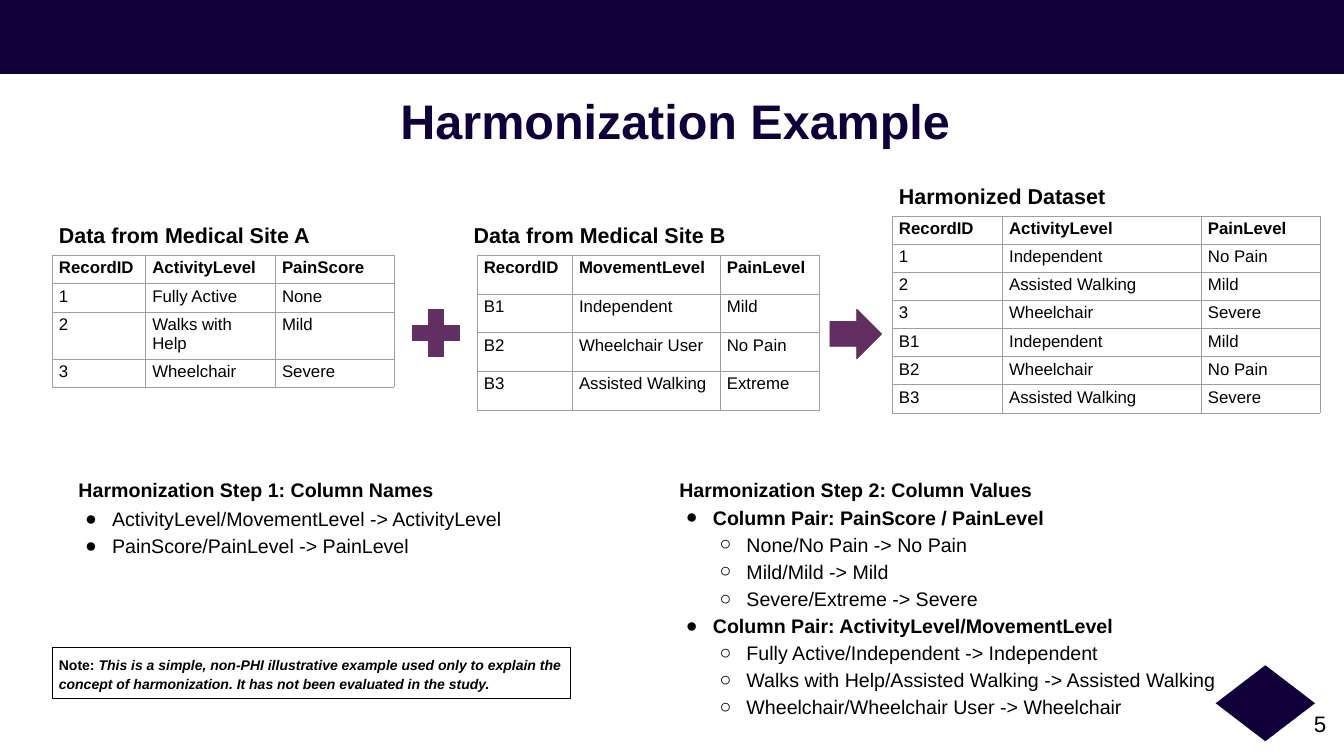
from lxml import etree
from pptx import Presentation
from pptx.dml.color import RGBColor
from pptx.enum.shapes import MSO_SHAPE
from pptx.enum.text import MSO_ANCHOR, PP_ALIGN
from pptx.oxml.ns import qn
from pptx.util import Pt

RECTANGLE, DIAMOND = MSO_SHAPE.RECTANGLE, MSO_SHAPE.DIAMOND
PLUS, ARROW = MSO_SHAPE.MATH_PLUS, MSO_SHAPE.RIGHT_ARROW
TOP, MIDDLE = MSO_ANCHOR.TOP, MSO_ANCHOR.MIDDLE
LEFT, RIGHT = PP_ALIGN.LEFT, PP_ALIGN.RIGHT

NAVY, PURPLE, BLACK, GREY = "0F0039", "632E62", "000000", "9E9E9E"
BULLETS = "●○"

SITE_A = [
    ["RecordID", "ActivityLevel", "PainScore"],
    ["1", "Fully Active", "None"],
    ["2", "Walks with Help", "Mild"],
    ["3", "Wheelchair", "Severe"],
]
SITE_B = [
    ["RecordID", "MovementLevel", "PainLevel"],
    ["B1", "Independent", "Mild"],
    ["B2", "Wheelchair User", "No Pain"],
    ["B3", "Assisted Walking", "Extreme"],
]
HARMONIZED = [
    ["RecordID", "ActivityLevel", "PainLevel"],
    ["1", "Independent", "No Pain"],
    ["2", "Assisted Walking", "Mild"],
    ["3", "Wheelchair", "Severe"],
    ["B1", "Independent", "Mild"],
    ["B2", "Wheelchair", "No Pain"],
    ["B3", "Assisted Walking", "Severe"],
]
COLUMN_NAMES = [
    (0, False, "ActivityLevel/MovementLevel -> ActivityLevel"),
    (0, False, "PainScore/PainLevel -> PainLevel"),
]
COLUMN_VALUES = [
    (0, True, "Column Pair: PainScore / PainLevel"),
    (1, False, "None/No Pain -> No Pain"),
    (1, False, "Mild/Mild -> Mild"),
    (1, False, "Severe/Extreme -> Severe"),
    (0, True, "Column Pair: ActivityLevel/MovementLevel"),
    (1, False, "Fully Active/Independent -> Independent"),
    (1, False, "Walks with Help/Assisted Walking -> Assisted Walking"),
    (1, False, "Wheelchair/Wheelchair User -> Wheelchair"),
]


def color(value):
    return RGBColor.from_string(value)


class SlideBuilder:
    font_name = "Arial"
    line_width = 0.75
    inset = 7.2

    def __init__(self, slide):
        self.slide = slide

    def style(self, font, size, bold=False, ink=BLACK, italic=False):
        font.name = self.font_name
        font.size = Pt(size)
        font.bold = bold
        font.italic = italic
        font.color.rgb = color(ink)

    def frame(self, shape, inset=inset, anchor=TOP):
        frame = shape.text_frame
        frame.word_wrap = True
        frame.vertical_anchor = anchor
        frame.margin_left = frame.margin_right = Pt(inset)
        frame.margin_top = frame.margin_bottom = Pt(inset)
        return frame

    def box(self, *bounds):
        return self.slide.shapes.add_textbox(*map(Pt, bounds))

    def text(self, words, bounds, size, bold=True, ink=BLACK,
             align=LEFT, anchor=TOP, inset=inset, spacing=1.0):
        frame = self.frame(self.box(*bounds), inset, anchor)
        frame.text = words
        paragraph = frame.paragraphs[0]
        paragraph.alignment = align
        paragraph.line_spacing = spacing
        self.style(paragraph.runs[0].font, size, bold, ink)

    def shape(self, kind, bounds, fill=None, line=None, adjustments=()):
        shape = self.slide.shapes.add_shape(kind, *map(Pt, bounds))
        shape.shadow.inherit = False
        for index, adjustment in enumerate(adjustments):
            shape.adjustments[index] = adjustment
        if fill:
            shape.fill.solid()
            shape.fill.fore_color.rgb = color(fill)
        else:
            shape.fill.background()
        if line:
            shape.line.color.rgb = color(line)
            shape.line.width = Pt(self.line_width)
        else:
            shape.line.fill.background()
        return shape

    def note(self, lead, body, bounds):
        paragraph = self.frame(self.shape(RECTANGLE, bounds, line=BLACK)).paragraphs[0]
        paragraph.alignment = LEFT
        paragraph.line_spacing = 1.15
        for words, italic in ((lead, False), (body, True)):
            run = paragraph.add_run()
            run.text = words
            self.style(run.font, 15, True, italic=italic)

    def bullets(self, items, bounds):
        frame = self.frame(self.box(*bounds))
        frame.text = "\n".join(words for _, _, words in items)
        for paragraph, (level, bold, _) in zip(frame.paragraphs, items):
            paragraph.level = level
            properties = paragraph._p.get_or_add_pPr()
            properties.set("marL", str(Pt(36 * (level + 1))))
            properties.set("indent", str(Pt(-28.8)))
            bullet_color = etree.SubElement(properties, qn("a:buClr"))
            etree.SubElement(bullet_color, qn("a:srgbClr"), val=BLACK)
            etree.SubElement(properties, qn("a:buFont"), typeface=self.font_name)
            etree.SubElement(properties, qn("a:buChar"), char=BULLETS[level])
            paragraph.line_spacing = 1.15
            self.style(paragraph.runs[0].font, 21, bold)

    def borders(self, cell):
        properties = cell._tc.get_or_add_tcPr()
        for index, side in enumerate(("lnL", "lnR", "lnT", "lnB")):
            line = etree.Element(qn(f"a:{side}"), w=str(Pt(self.line_width)))
            fill = etree.SubElement(line, qn("a:solidFill"))
            etree.SubElement(fill, qn("a:srgbClr"), val=GREY)
            properties.insert(index, line)

    def table(self, records, left, top, widths, row_height):
        table = self.slide.shapes.add_table(
            len(records), len(widths), Pt(left), Pt(top),
            Pt(sum(widths)), Pt(row_height * len(records))).table
        table.first_row = table.horz_banding = False
        for column, width in zip(table.columns, widths):
            column.width = Pt(width)
        for row_index, record in enumerate(records):
            table.rows[row_index].height = Pt(row_height)
            for column_index, value in enumerate(record):
                cell = table.cell(row_index, column_index)
                cell.margin_left = cell.margin_right = Pt(self.inset)
                cell.margin_top = cell.margin_bottom = Pt(self.inset / 2)
                cell.fill.background()
                self.borders(cell)
                cell.text_frame.text = value
                run = cell.text_frame.paragraphs[0].runs[0]
                self.style(run.font, 18, row_index == 0)


def main():
    deck = Presentation()
    deck.slide_width, deck.slide_height = Pt(1440), Pt(810)
    page = SlideBuilder(deck.slides.add_slide(deck.slide_layouts[6]))

    page.shape(RECTANGLE, (0, 0, 1440, 79.2), NAVY)
    page.shape(DIAMOND, (1302.5, 712.8, 106.5, 81.4), NAVY)
    page.text("Harmonization Example", (422, 54.7, 919.4, 156.2), 52,
              ink=NAVY, anchor=MIDDLE, spacing=0.9)
    page.text("5", (1347.8, 748, 86.4, 62), 24, bold=False, align=RIGHT, inset=13)

    page.text("Data from Medical Site A", (56, 230.4, 286, 34), 23)
    page.table(SITE_A, 56, 273.6, (100, 139, 127), 30.3)
    page.text("Data from Medical Site B", (500.4, 230.4, 286, 34), 23)
    page.table(SITE_B, 511.2, 273.6, (102, 158.4, 106.3), 41.4)
    page.text("Harmonized Dataset", (956, 188.6, 286, 34), 23)
    page.table(HARMONIZED, 956, 231.4, (118, 213, 127.5), 30.15)

    page.shape(PLUS, (432.7, 322.6, 68.4, 68.4), PURPLE, PURPLE, (0.235,))
    page.shape(ARROW, (889.2, 331.2, 55.4, 53.3), PURPLE, PURPLE, (0.5, 0.5))

    page.text("Harmonization Step 1: Column Names", (77, 505, 436, 39.6), 21)
    page.bullets(COLUMN_NAMES, (77, 532, 778, 72))
    page.text("Harmonization Step 2: Column Values", (720.7, 505, 436, 39.6), 21)
    page.bullets(COLUMN_VALUES, (720.7, 530.6, 608.4, 246.2))
    page.note("Note: ", "This is a simple, non-PHI illustrative example used only to "
              "explain the concept of harmonization. It has not been evaluated in "
              "the study.", (56, 693.4, 555, 55.4))

    deck.save("out.pptx")


if __name__ == "__main__":
    main()
